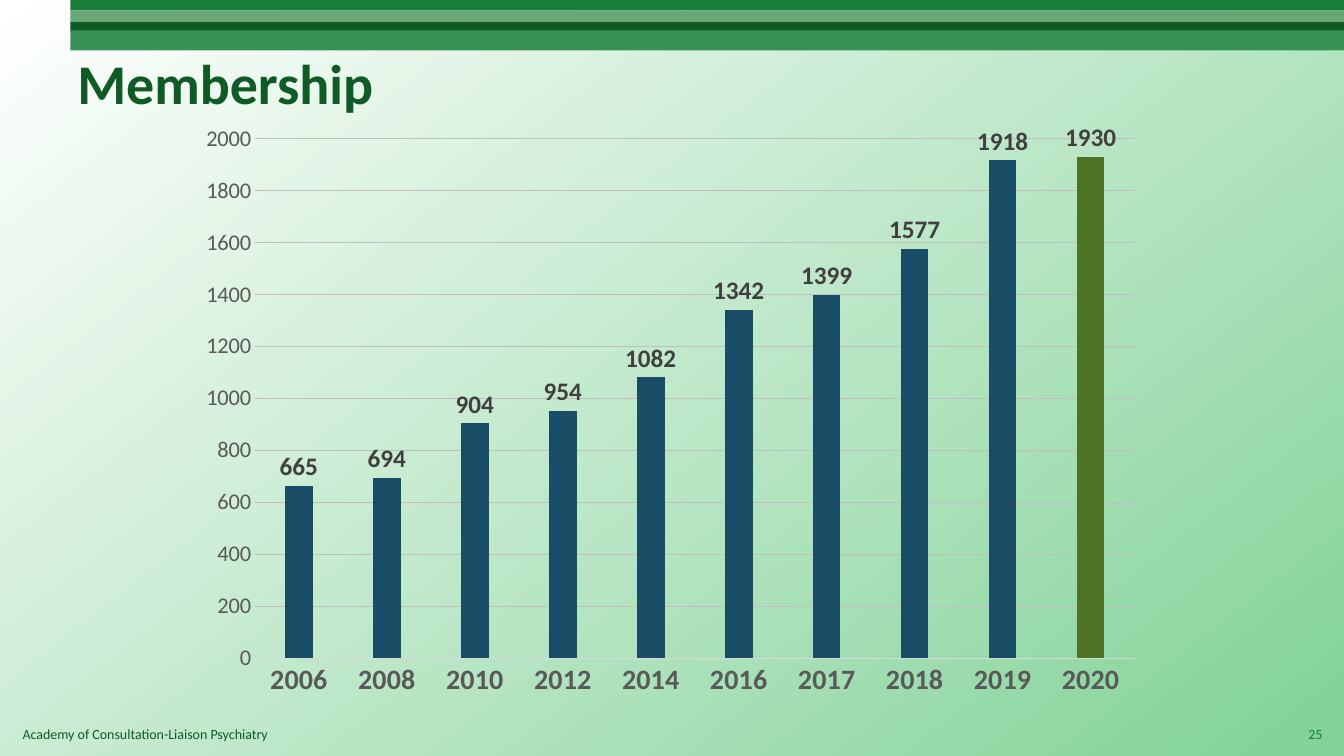
import dataclasses

import pptx
import pptx.chart.data
import pptx.dml.color
import pptx.enum.chart
import pptx.enum.shapes
import pptx.enum.text
import pptx.util

PX = 9525


@dataclasses.dataclass(frozen=True)
class Theme:
    """Colours, type sizes and font of the slide."""
    font: str = "Calibri"
    dark: str = "105A25"
    green: str = "177D38"
    bands: tuple = ("177D38", "66A677", "105A25", "389155")
    back: tuple = ("FFFFFF", "81D297")
    bar: str = "194D66"
    latest_bar: str = "4D7326"
    axis_text: str = "595959"
    label_text: str = "404040"
    axis_line: str = "D9D9D9"
    grid: str = "BFBFBF"
    title_size: int = 40
    category_size: int = 20
    label_size: int = 18
    value_size: int = 16
    small_size: int = 10


THEME = Theme()
MEMBERS = {
    "2006": 665, "2008": 694, "2010": 904, "2012": 954, "2014": 1082,
    "2016": 1342, "2017": 1399, "2018": 1577, "2019": 1918, "2020": 1930,
}


def emu(*lengths):
    """Turn px lengths into EMU."""
    return [pptx.util.Emu(n * PX) for n in lengths]


def rgb(value):
    """Return a colour object for a hex value."""
    return pptx.dml.color.RGBColor.from_string(value)


def style_font(font, size, color, bold=False):
    """Apply the theme font with a size, colour and weight."""
    font.name = THEME.font
    font.size = pptx.util.Pt(size)
    font.color.rgb = rgb(color)
    font.bold = bold


def style_line(line, color):
    """Draw a thin solid chart line."""
    line.color.rgb = rgb(color)
    line.width = pptx.util.Pt(0.75)


def paint_background(s):
    """Fill the slide with a diagonal gradient."""
    fill = s.background.fill
    fill.gradient()
    fill.gradient_angle = 308
    for stop, color, position in zip(fill.gradient_stops, THEME.back, (0, 1)):
        stop.color.rgb = rgb(color)
        stop.position = position


def add_bands(s, x, y, w):
    """Stack the coloured header bands in the given box."""
    edges = ((0, 10), (10, 12), (21, 9), (29, 19))
    for (top, height), color in zip(edges, THEME.bands):
        sp = s.shapes.add_shape(pptx.enum.shapes.MSO_SHAPE.RECTANGLE,
                                *emu(x, y + top, w, height))
        sp.shadow.inherit = False
        sp.fill.solid()
        sp.fill.fore_color.rgb = rgb(color)
        sp.line.fill.background()


def set_title(s, text, x, y, w, h):
    """Place and format the title placeholder."""
    sp = s.shapes.title
    sp.left, sp.top, sp.width, sp.height = emu(x, y, w, h)
    tf = sp.text_frame
    tf.text = text
    tf.vertical_anchor = pptx.enum.text.MSO_ANCHOR.MIDDLE
    p = tf.paragraphs[0]
    p.alignment = pptx.enum.text.PP_ALIGN.LEFT
    style_font(p.font, THEME.title_size, THEME.dark, True)


def add_small_text(s, text, color, align, x, y, w, h):
    """Add one line of small footer text."""
    tf = s.shapes.add_textbox(*emu(x, y, w, h)).text_frame
    tf.word_wrap = True
    tf.vertical_anchor = pptx.enum.text.MSO_ANCHOR.MIDDLE
    p = tf.paragraphs[0]
    p.text = text
    p.alignment = align
    style_font(p.font, THEME.small_size, color)


def style_axes(chart):
    """Format the year and member-count axes."""
    years, counts = chart.category_axis, chart.value_axis
    for axis in (years, counts):
        axis.major_tick_mark = pptx.enum.chart.XL_TICK_MARK.NONE
        axis.minor_tick_mark = pptx.enum.chart.XL_TICK_MARK.NONE
    style_font(years.tick_labels.font, THEME.category_size, THEME.axis_text, True)
    style_line(years.format.line, THEME.axis_line)
    style_font(counts.tick_labels.font, THEME.value_size, THEME.axis_text)
    counts.format.line.fill.background()
    counts.minimum_scale, counts.maximum_scale, counts.major_unit = 0, 2000, 200
    style_line(counts.major_gridlines.format.line, THEME.grid)


def add_member_chart(s, x, y, w, h):
    """Add the membership column chart with the latest year picked out."""
    data = pptx.chart.data.CategoryChartData()
    data.categories = list(MEMBERS)
    data.add_series("Series 1", list(MEMBERS.values()))
    chart = s.shapes.add_chart(pptx.enum.chart.XL_CHART_TYPE.COLUMN_CLUSTERED,
                               *emu(x, y, w, h), data).chart
    chart.has_title = False
    chart.has_legend = False
    style_font(chart.font, THEME.small_size, "000000")
    style_axes(chart)
    plot = chart.plots[0]
    plot.vary_by_categories = False
    plot.gap_width, plot.overlap = 219, -27
    series = plot.series[0]
    series.format.fill.solid()
    series.format.fill.fore_color.rgb = rgb(THEME.latest_bar)
    for i in range(len(MEMBERS) - 1):
        fill = series.points[i].format.fill
        fill.solid()
        fill.fore_color.rgb = rgb(THEME.bar)
    labels = series.data_labels
    labels.show_value = True
    labels.position = pptx.enum.chart.XL_LABEL_POSITION.OUTSIDE_END
    style_font(labels.font, THEME.label_size, THEME.label_text, True)


def build_chart_slide(prs):
    """Build the membership slide."""
    align = pptx.enum.text.PP_ALIGN
    s = prs.slides.add_slide(prs.slide_layouts.get_by_name("Title Only"))
    paint_background(s)
    add_bands(s, 67, 0, 1213)
    set_title(s, "Membership", 64, 18, 864, 120)
    add_member_chart(s, 178, 108, 921, 567)
    add_small_text(s, "Academy of Consultation-Liaison Psychiatry", THEME.dark,
                   align.LEFT, 12, 686, 888, 26)
    add_small_text(s, "25", THEME.green, align.RIGHT, 1218, 680, 51, 38)


def main():
    """Create and save the presentation."""
    prs = pptx.Presentation()
    prs.slide_width, prs.slide_height = emu(1280, 720)
    build_chart_slide(prs)
    prs.save("out.pptx")


if __name__ == "__main__":
    main()
